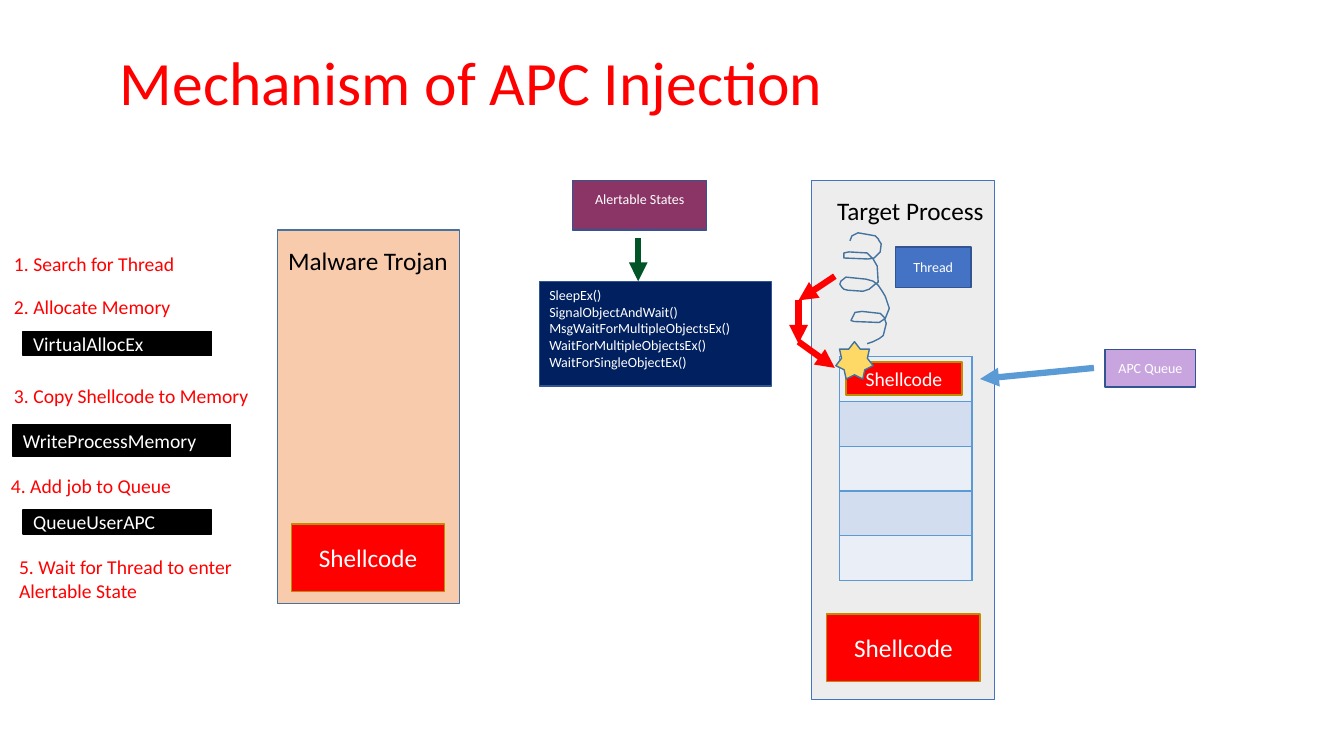
from dataclasses import dataclass

from lxml.etree import SubElement
from pptx import Presentation
from pptx.dml.color import RGBColor
from pptx.enum.shapes import MSO_CONNECTOR, MSO_SHAPE
from pptx.enum.text import MSO_ANCHOR as Anchor, PP_ALIGN as Align
from pptx.oxml.ns import qn
from pptx.util import Pt

PX = 9144
RED, WHITE, BLACK = "FF0000", "FFFFFF", "000000"
NAVY_LINE, STEEL_LINE, GOLD_LINE = "325491", "43739E", "BD8E00"
THREAD_COIL = [
    (10, 8), (12, 3), (18, 0), (35, 3), (38, 6), (39, 8), (41, 11), (40, 19),
    (34, 25), (28, 26), (4, 25), (4, 20), (9, 19), (27, 20), (31, 24), (33, 26),
    (37, 33), (38, 49), (35, 51), (29, 56), (23, 58), (8, 57), (4, 56), (2, 54),
    (0, 51), (1, 48), (6, 44), (26, 46), (33, 48), (38, 52), (42, 58), (45, 63),
    (47, 69), (49, 75), (45, 85), (39, 89), (14, 88), (11, 87), (15, 79),
    (22, 78), (40, 80), (44, 84), (46, 90), (43, 102), (39, 105), (33, 108),
    (27, 110),
]


@dataclass
class Box:
    """A rectangle on the slide, in px."""
    left: int
    top: int
    width: int
    height: int

    def inner(self, left, top, width, height):
        """Return a box placed relative to this one."""
        return Box(self.left + left, self.top + top, width, height)

    def emu(self):
        """Return left, top, width and height in EMU."""
        return [value * PX for value in (self.left, self.top, self.width, self.height)]


def color(hex_string):
    """Turn a hex string into a colour."""
    return RGBColor.from_string(hex_string)


def write(shape, lines, size, text_color, align=Align.LEFT, anchor=Anchor.MIDDLE):
    """Write one paragraph per line into a shape."""
    frame = shape.text_frame
    frame.word_wrap = True
    frame.vertical_anchor = anchor
    for index, line in enumerate(lines):
        paragraph = frame.paragraphs[0] if index == 0 else frame.add_paragraph()
        paragraph.alignment = align
        run = paragraph.add_run()
        run.text = line
        run.font.name = "Calibri"
        run.font.size = Pt(size)
        run.font.color.rgb = color(text_color)


def add_label(slide, box, text, size, text_color, align=Align.LEFT, anchor=Anchor.TOP):
    """Add a text box with one paragraph."""
    shape = slide.shapes.add_textbox(*box.emu())
    write(shape, [text], size, text_color, align, anchor)
    return shape


def add_block(slide, box, fill, line, weight=1, kind=MSO_SHAPE.RECTANGLE):
    """Add a filled and outlined preset shape."""
    shape = slide.shapes.add_shape(kind, *box.emu())
    shape.shadow.inherit = False
    shape.fill.solid()
    shape.fill.fore_color.rgb = color(fill)
    shape.line.color.rgb = color(line)
    shape.line.width = Pt(weight)
    return shape


def add_shellcode(slide, box, size=18):
    """Add a red block that stands for the shellcode."""
    write(add_block(slide, box, RED, GOLD_LINE), ["Shellcode"], size, WHITE, Align.CENTER)


def add_arrow(slide, box, start, end, line_color):
    """Add a thick arrow between two points relative to a box."""
    points = [(box.left + x, box.top + y) for x, y in (start, end)]
    arrow = slide.shapes.add_connector(
        MSO_CONNECTOR.STRAIGHT, *[value * PX for point in points for value in point])
    arrow.line.color.rgb = color(line_color)
    arrow.line.width = Pt(4.5)
    properties = arrow._element.spPr
    SubElement(properties.find(qn("a:ln")), qn("a:tailEnd"), type="triangle")
    SubElement(properties, qn("a:effectLst"))


def add_coil(slide, box):
    """Draw the thread as a coiled open line."""
    points = [((box.left + x) * PX, (box.top + y) * PX) for x, y in THREAD_COIL]
    builder = slide.shapes.build_freeform(*points[0])
    builder.add_line_segments(points[1:], close=False)
    coil = builder.convert_to_shape()
    coil.shadow.inherit = False
    coil.fill.background()
    coil.line.color.rgb = color(STEEL_LINE)
    coil.line.width = Pt(1)


def add_memory_table(slide, box, rows=5):
    """Add the banded one-column table of memory cells."""
    table = slide.shapes.add_table(rows, 1, *box.emu()).table
    table.first_row = table.horz_banding = False
    for index, row in enumerate(table.rows):
        row.height = box.height * PX // rows
        cell = row.cells[0]
        properties = cell._tc.get_or_add_tcPr()
        for side in ("a:lnL", "a:lnR", "a:lnT", "a:lnB"):
            border = SubElement(properties, qn(side), w=str(Pt(1)))
            SubElement(SubElement(border, qn("a:solidFill")), qn("a:srgbClr"), val="5B9BD5")
        cell.fill.solid()
        cell.fill.fore_color.rgb = color("D2DEEF" if index % 2 else "EAEFF7")


def draw_title(slide, box):
    """Draw the slide title."""
    title = add_label(slide, box, "Mechanism of APC Injection", 44, RED, anchor=Anchor.MIDDLE)
    title.text_frame.paragraphs[0].line_spacing = 0.9


def draw_steps(slide, box):
    """Draw the numbered steps and the calls they use."""
    for left, top, height, text in (
            (4, 0, 34, "1. Search for Thread"),
            (4, 43, 34, "2. Allocate Memory"),
            (4, 131, 34, "3. Copy Shellcode to Memory"),
            (1, 220, 34, "4. Add job to Queue"),
            (9, 301, 57, "5. Wait for Thread to enter Alertable State")):
        add_label(slide, box.inner(left, top, 261, height), text, 14, RED)
    for left, top, width, height, call in (
            (23, 84, 187, 24, "VirtualAllocEx"),
            (13, 176, 216, 32, "WriteProcessMemory"),
            (23, 261, 187, 24, "QueueUserAPC")):
        block = add_block(slide, box.inner(left, top, width, height), BLACK, BLACK)
        write(block, [call], 14, WHITE)


def draw_malware(slide, box):
    """Draw the malware process with its shellcode."""
    add_block(slide, box, "F8CBAD", STEEL_LINE)
    add_label(slide, box.inner(-13, 10, 206, 40), "Malware Trojan", 18, BLACK, Align.CENTER)
    add_shellcode(slide, box.inner(14, 292, 152, 67))


def draw_alertable_states(slide, box):
    """Draw the alertable states heading and its list of calls."""
    heading = add_block(slide, box.inner(33, 0, 133, 49), "8B3566", NAVY_LINE)
    write(heading, ["Alertable States"], 10, WHITE, Align.CENTER, Anchor.BOTTOM)
    heading.text_frame.margin_bottom = 22 * PX
    calls = add_block(slide, box.inner(0, 100, 230, 104), "002060", NAVY_LINE)
    write(calls, ["SleepEx()", "SignalObjectAndWait()", "MsgWaitForMultipleObjectsEx()",
                  "WaitForMultipleObjectsEx()", "WaitForSingleObjectEx()"],
          10, WHITE, anchor=Anchor.TOP)
    add_arrow(slide, box, (98, 57), (98, 100), "005426")


def draw_target_process(slide, box):
    """Draw the target process with its thread, memory and injected code."""
    add_block(slide, box, "EDEDED", "4472C4", 0.5)
    add_label(slide, box.inner(-5, 10, 206, 40), "Target Process", 18, BLACK, Align.CENTER)
    add_shellcode(slide, box.inner(15, 430, 152, 67))
    add_coil(slide, box.inner(28, 52, 49, 110))
    thread = add_block(slide, box.inner(83, 66, 75, 40), "4472C4", NAVY_LINE)
    write(thread, ["Thread"], 10, WHITE, Align.CENTER)
    add_memory_table(slide, box.inner(28, 175, 131, 222))
    add_shellcode(slide, box.inner(34, 180, 115, 33), 14)
    for start, end in (((-13, 119), (-13, 162)), ((-13, 160), (23, 186)),
                       ((23, 95), (-13, 119))):
        add_arrow(slide, box, start, end, RED)
    add_block(slide, box.inner(24, 160, 37, 37), "FFD966", STEEL_LINE,
              kind=MSO_SHAPE.STAR_7_POINT)


def draw_queue(slide, box):
    """Draw the APC queue and its arrow to the memory."""
    queue = add_block(slide, box, "C9A5DF", NAVY_LINE)
    write(queue, ["APC Queue"], 10, WHITE, Align.CENTER)
    add_arrow(slide, box, (-11, 18), (-124, 29), "5B9BD5")


def main():
    """Build the slide and save it."""
    presentation = Presentation()
    presentation.slide_width = 1333 * PX
    presentation.slide_height = 750 * PX
    slide = presentation.slides.add_slide(presentation.slide_layouts[6])
    draw_title(slide, Box(109, 47, 1057, 76))
    draw_steps(slide, Box(0, 245, 270, 358))
    draw_malware(slide, Box(275, 228, 181, 371))
    draw_alertable_states(slide, Box(535, 179, 230, 204))
    draw_target_process(slide, Box(805, 179, 181, 515))
    draw_queue(slide, Box(1096, 347, 90, 37))
    presentation.save("out.pptx")


if __name__ == "__main__":
    main()
